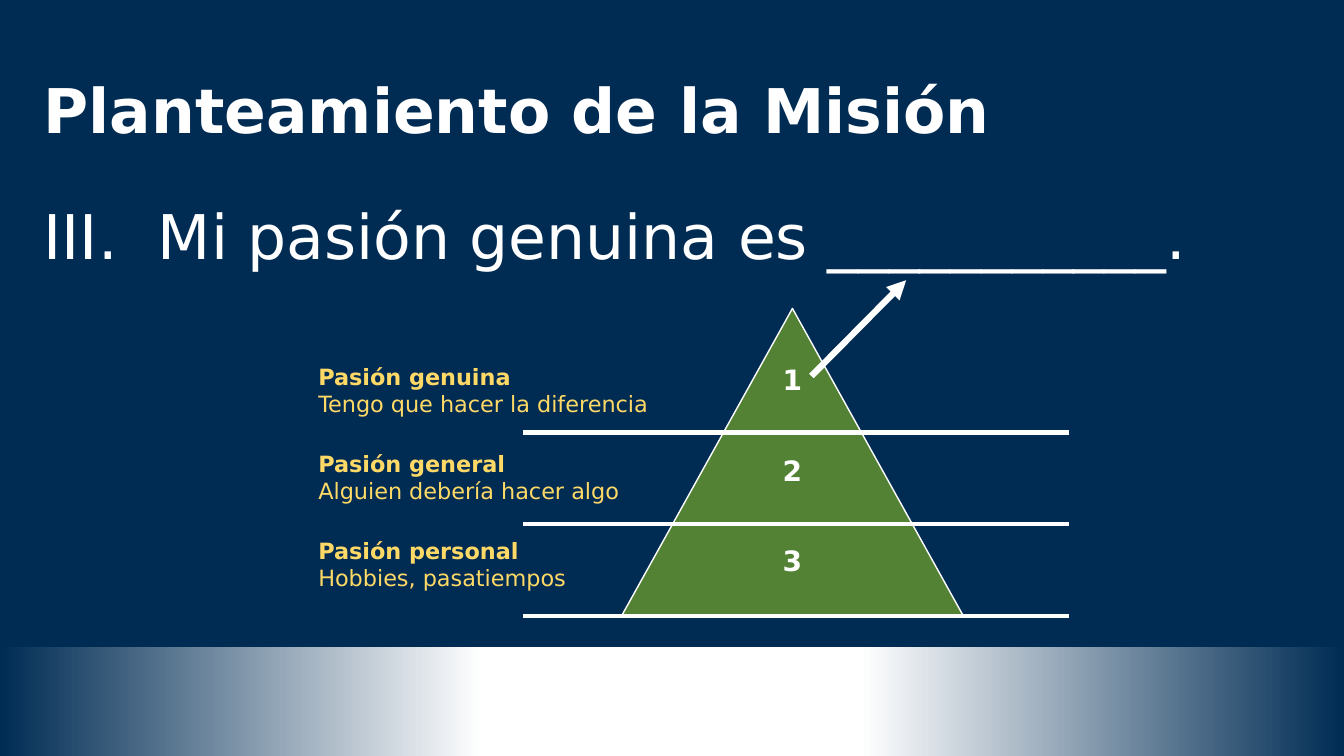
from dataclasses import dataclass

from lxml.etree import SubElement as Sub
from pptx import Presentation
from pptx.dml.color import RGBColor as Rgb
from pptx.enum.shapes import MSO_CONNECTOR as Conn, MSO_SHAPE as Kind
from pptx.enum.text import MSO_ANCHOR as Anchor, MSO_AUTO_SIZE as Auto, PP_ALIGN as Align
from pptx.oxml.ns import qn
from pptx.util import Inches, Pt

COLS, ROWS = 40, 22.5  # square cells, a third of an inch
WIDE, HIGH = Inches(40 / 3), Inches(7.5)


@dataclass(frozen=True)
class Theme:
    font: str = "DejaVu Sans"
    navy: str = "002C54"
    white: str = "FFFFFF"
    gold: str = "FFD966"
    green: str = "548235"
    head: int = 44
    label: int = 16
    digit: int = 20


@dataclass(frozen=True)
class Box:
    col: float
    row: float
    cols: float
    rows: float

    def place(self) -> tuple:
        return across(self.col), down(self.row), across(self.cols), down(self.rows)


@dataclass(frozen=True)
class Line:
    start: tuple
    end: tuple
    width: float
    arrow: bool = False


@dataclass(frozen=True)
class Level:
    name: str
    note: str


THEME = Theme()
LEVELS = [
    Level("Pasión genuina", "Tengo que hacer la diferencia"),
    Level("Pasión general", "Alguien debería hacer algo"),
    Level("Pasión personal", "Hobbies, pasatiempos"),
]


def across(cols: float) -> int:
    return round(WIDE * cols / COLS)


def down(rows: float) -> int:
    return round(HIGH * rows / ROWS)


def style(para, size: int, color: str, bold: bool = False) -> None:
    for run in para.runs:
        font = run.font
        font.name, font.size, font.bold = THEME.font, Pt(size), bold
        font.color.rgb = Rgb.from_string(color)


def fill_holder(holder, box: Box, text: str, bold: bool, anchor):
    holder.left, holder.top, holder.width, holder.height = box.place()
    frame = holder.text_frame
    frame.text = text
    frame.auto_size, frame.vertical_anchor = Auto.NONE, anchor
    para = frame.paragraphs[0]
    para.alignment, para.line_spacing, para.space_before = Align.LEFT, 0.9, Pt(0)
    style(para, THEME.head, THEME.white, bold)
    return para


def add_text(slide, box: Box, lines: list[str]):
    frame = slide.shapes.add_textbox(*box.place()).text_frame
    frame.word_wrap = True
    frame.text = "\n".join(lines)
    return frame.paragraphs


def add_line(slide, line: Line) -> None:
    (x1, y1), (x2, y2) = line.start, line.end
    conn = slide.shapes.add_connector(
        Conn.STRAIGHT, across(x1), down(y1), across(x2), down(y2))
    conn.line.color.rgb = Rgb.from_string(THEME.white)
    conn.line.width = Pt(line.width)
    props = conn._element.spPr
    if line.arrow:
        Sub(props.find(qn("a:ln")), qn("a:tailEnd"), type="triangle")
    Sub(props, qn("a:effectLst"))


def add_band(slide) -> None:
    band = slide.shapes.add_shape(Kind.RECTANGLE, *Box(0, 19.26, COLS, 3.24).place())
    band.shadow.inherit = False
    band.line.fill.background()
    band.fill.gradient()
    band.fill.gradient_angle = 0
    stops = band._element.spPr.find(qn("a:gradFill")).find(qn("a:gsLst"))
    for stop in list(stops):
        stops.remove(stop)
    for share, color in ((0, THEME.navy), (36, THEME.white),
                         (64, THEME.white), (100, THEME.navy)):
        stop = Sub(stops, qn("a:gs"), pos=str(share * 1000))
        Sub(stop, qn("a:srgbClr"), val=color)
    slide.shapes._spTree.insert(2, band._element)  # behind the text


def add_heads(slide) -> None:
    title, body = slide.shapes.title, slide.placeholders[1]
    fill_holder(title, Box(1, 1.2, 38, 4.35), "Planteamiento de la Misión",
                True, Anchor.MIDDLE)
    para = fill_holder(body, Box(1, 6, 38, 13.68),
                       " Mi pasión genuina es ___________.", False, Anchor.TOP)
    props = para._p.get_or_add_pPr()
    hang = Inches(0.94)
    props.set("marL", str(hang))
    props.set("indent", str(-hang))
    Sub(props, qn("a:buFont"), typeface=THEME.font)
    Sub(props, qn("a:buAutoNum"), type="romanUcPeriod", startAt="3")


def add_labels(slide) -> None:
    lines = [text for level in LEVELS for text in (level.name, level.note)]
    for i, para in enumerate(add_text(slide, Box(9.18, 10.65, 15.87, 7.26), lines)):
        first = i % 2 == 0
        if first and i:
            para.space_before = Pt(24)
        style(para, THEME.label, THEME.gold, first)


def add_peak(slide) -> None:
    peak = slide.shapes.add_shape(Kind.ISOSCELES_TRIANGLE,
                                  *Box(18.5, 9.18, 10.17, 9.15).place())
    peak.shadow.inherit = False
    peak.fill.solid()
    peak.fill.fore_color.rgb = Rgb.from_string(THEME.green)
    peak.line.color.rgb = Rgb.from_string(THEME.white)
    peak.line.width = Pt(1)

    digits = [str(i + 1) for i in range(len(LEVELS))]
    for i, para in enumerate(add_text(slide, Box(22.71, 10.65, 1.74, 6.78), digits)):
        para.alignment = Align.CENTER
        if i:
            para.space_before = Pt(40.5)
        style(para, THEME.digit, THEME.white, True)

    for i in range(len(LEVELS)):
        row = 12.87 + 2.73 * i
        add_line(slide, Line((15.57, row), (31.83, row), 3))


def main() -> None:
    deck = Presentation()
    deck.slide_width, deck.slide_height = WIDE, HIGH
    slide = deck.slides.add_slide(deck.slide_layouts[1])
    # Backdrop
    slide.background.fill.solid()
    slide.background.fill.fore_color.rgb = Rgb.from_string(THEME.navy)
    add_band(slide)
    # Title and statement
    add_heads(slide)
    # Pyramid with its labels, and the arrow to the blank
    add_labels(slide)
    add_peak(slide)
    add_line(slide, Line((24.15, 11.19), (26.97, 8.34), 4.5, arrow=True))
    deck.save("out.pptx")


if __name__ == "__main__":
    main()
